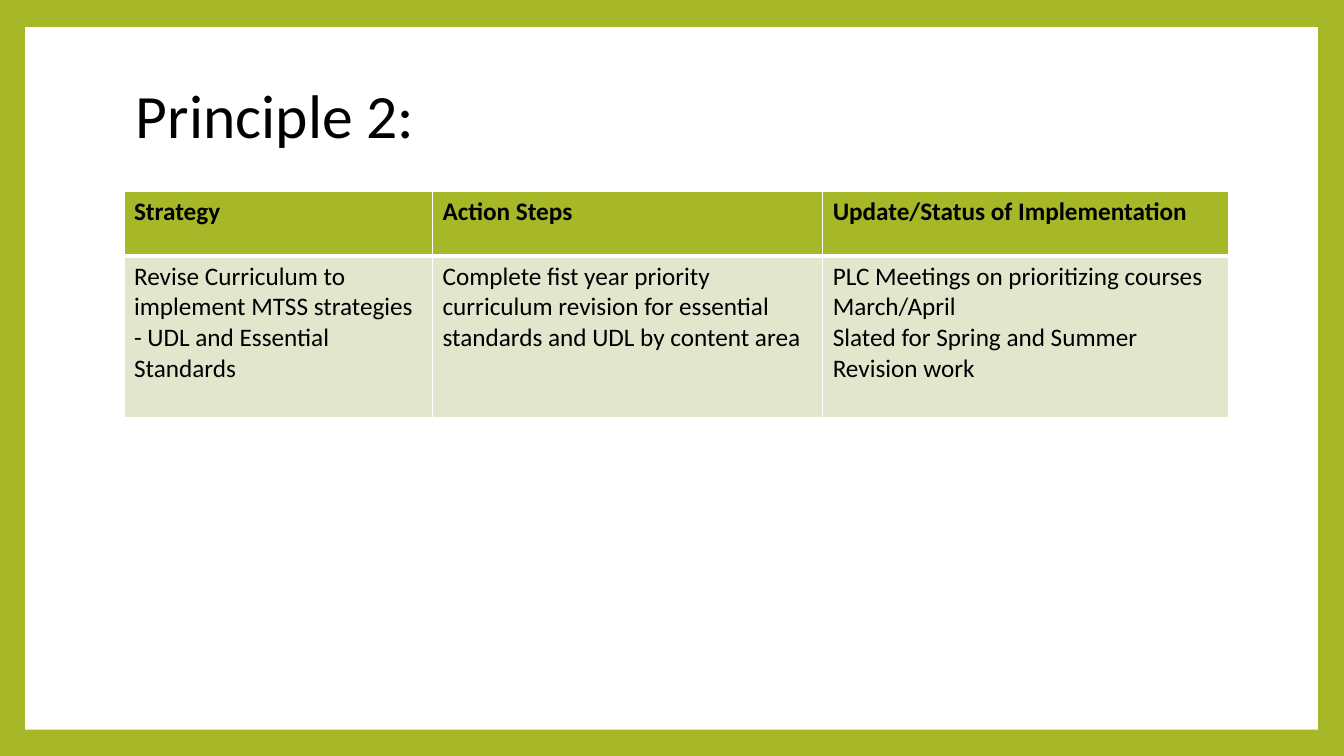
import dataclasses

import pptx
import pptx.dml.color
import pptx.enum.shapes
import pptx.enum.text
import pptx.oxml
import pptx.oxml.ns
import pptx.util


@dataclasses.dataclass(frozen=True)
class Theme:
    green: str = "A6B727"
    pale: str = "E1E6CD"
    white: str = "FFFFFF"
    ink: str = "000000"
    face: str = "Calibri"
    title: int = 44
    body: int = 18


THEME = Theme()
COLS = [306, 387, 403]
ROWS = [64, 160]
CELLS = [
    ["Strategy", "Action Steps", "Update/Status of Implementation"],
    [
        "Revise Curriculum to implement MTSS strategies - UDL and Essential Standards",
        "Complete fist year priority curriculum revision for essential "
        "standards and UDL by content area",
        "PLC Meetings on prioritizing courses March/April\n"
        "Slated for Spring and Summer Revision work",
    ],
]


def px(count):
    """Turn px, 100 to the inch, into EMU."""
    return pptx.util.Emu(count * 9144)


def paint(fill, color):
    fill.solid()
    fill.fore_color.rgb = pptx.dml.color.RGBColor.from_string(color)


def write(frame, text, size, bold=False):
    frame.text = text
    for para in frame.paragraphs:
        font = para.font
        font.name = THEME.face
        font.size = pptx.util.Pt(size)
        font.bold = bold
        font.color.rgb = pptx.dml.color.RGBColor.from_string(THEME.ink)


def add_panel(slide, *box):
    panel = slide.shapes.add_shape(
        pptx.enum.shapes.MSO_SHAPE.RECTANGLE, *map(px, box))
    panel.shadow.inherit = False
    paint(panel.fill, THEME.white)
    panel.line.fill.background()


def add_title(slide, text, *box):
    frame = slide.shapes.add_textbox(*map(px, box)).text_frame
    frame.word_wrap = True
    frame.vertical_anchor = pptx.enum.text.MSO_ANCHOR.MIDDLE
    write(frame, text, THEME.title)
    frame.paragraphs[0].line_spacing = 0.9


def add_edge(cell, side, width):
    space = pptx.oxml.ns.nsdecls("a")
    cell._tc.get_or_add_tcPr().append(pptx.oxml.parse_xml(
        f'<a:ln{side} {space} w="{pptx.util.Pt(width)}"><a:solidFill>'
        f'<a:srgbClr val="{THEME.white}"/></a:solidFill></a:ln{side}>'))


def add_grid(slide, left, top):
    """Add the strategy table, with a thick rule below its header."""
    grid = slide.shapes.add_table(
        len(ROWS), len(COLS), px(left), px(top),
        px(sum(COLS)), px(sum(ROWS))).table
    for col, width in zip(grid.columns, COLS):
        col.width = px(width)
    for index, (row, height) in enumerate(zip(grid.rows, ROWS)):
        row.height = px(height)
        head = index == 0
        edges = {"L": 1, "R": 1, "T": 1 if head else 3, "B": 3 if head else 1}
        for cell, text in zip(row.cells, CELLS[index]):
            write(cell.text_frame, text, THEME.body, head)
            for side, width in edges.items():
                add_edge(cell, side, width)
            paint(cell.fill, THEME.green if head else THEME.pale)


def main():
    deck = pptx.Presentation()
    deck.slide_width, deck.slide_height = px(1333), px(750)
    slide = deck.slides.add_slide(deck.slide_layouts[6])
    paint(slide.background.fill, THEME.green)
    add_panel(slide, 25, 27, 1282, 697)
    add_title(slide, "Principle 2:", 125, 44, 1080, 148)
    add_grid(slide, 123, 190)
    deck.save("out.pptx")


if __name__ == "__main__":
    main()
